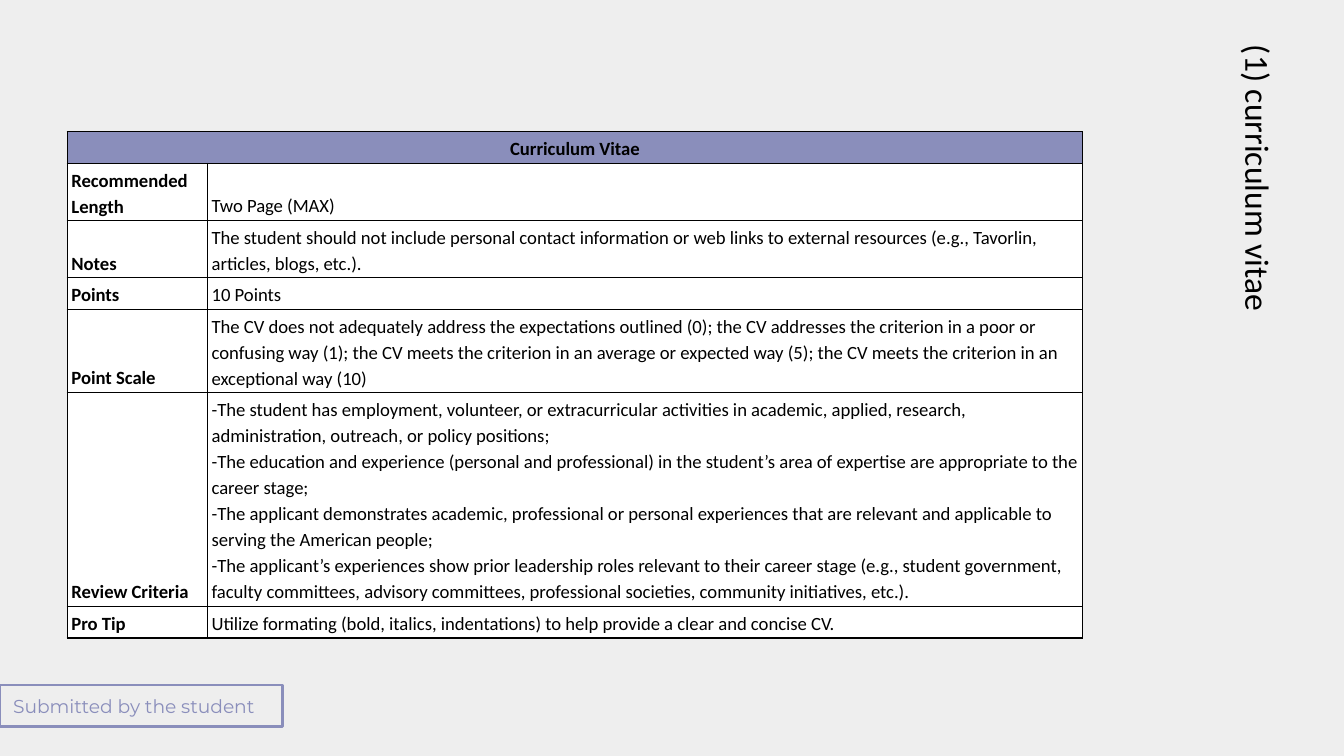
from pptx import Presentation
from pptx.dml.color import RGBColor
from pptx.enum.shapes import MSO_SHAPE as Shape
from pptx.enum.text import MSO_ANCHOR as Anchor, PP_ALIGN as Align
from pptx.oxml import parse_xml
from pptx.oxml.ns import nsdecls
from pptx.util import Cm, Pt

COLORS = {"page": "EEEEEE", "accent": "8A8EBB", "text": "000000", "cell": "FFFFFF"}

ROWS = [
    (0.6, "Curriculum Vitae", ""),
    (1.08, "Recommended Length", "Two Page (MAX)"),
    (1.08, "Notes",
     "The student should not include personal contact information or web links to "
     "external resources (e.g., Tavorlin, articles, blogs, etc.)."),
    (0.6, "Points", "10 Points"),
    (1.57, "Point Scale",
     "The CV does not adequately address the expectations outlined (0); the CV addresses "
     "the criterion in a poor or confusing way (1); the CV meets the criterion in an "
     "average or expected way (5); the CV meets the criterion in an exceptional way (10)"),
    (4.04, "Review Criteria",
     "-The student has employment, volunteer, or extracurricular activities in academic, "
     "applied, research, administration, outreach, or policy positions;\n"
     "-The education and experience (personal and professional) in the student’s area of "
     "expertise are appropriate to the career stage;\n"
     "-The applicant demonstrates academic, professional or personal experiences that are "
     "relevant and applicable to serving the American people;\n"
     "-The applicant’s experiences show prior leadership roles relevant to their career "
     "stage (e.g., student government, faculty committees, advisory committees, "
     "professional societies, community initiatives, etc.)."),
    (0.6, "Pro Tip",
     "Utilize formating (bold, italics, indentations) to help provide a clear and concise CV."),
]
COLUMN_WIDTHS = [2.65, 16.54]


def color(name):
    return RGBColor.from_string(COLORS[name])


def write(frame, text, size, font="Calibri", ink="text", bold=False):
    frame.text = text
    frame.word_wrap = True
    for paragraph in frame.paragraphs:
        for run in paragraph.runs:
            run.font.size = Pt(size)
            run.font.name = font
            run.font.bold = bold
            run.font.color.rgb = color(ink)


deck = Presentation()
deck.slide_width, deck.slide_height = Cm(25.4), Cm(14.29)
slide = deck.slides.add_slide(deck.slide_layouts[6])
slide.background.fill.solid()
slide.background.fill.fore_color.rgb = color("page")

title = slide.shapes.add_textbox(Cm(17.83), Cm(5.59), Cm(11.58), Cm(1.6))
title.rotation = 90
write(title.text_frame, "(1) curriculum vitae", 18)

submitter = slide.shapes.add_shape(Shape.RECTANGLE, 0, Cm(12.95), Cm(5.34), Cm(0.79))
submitter.shadow.inherit = False
submitter.fill.background()
submitter.line.color.rgb = color("accent")
submitter.line.width = Pt(1.5)
write(submitter.text_frame, "Submitted by the student", 10, "Montserrat", "accent")
submitter.text_frame.vertical_anchor = Anchor.MIDDLE
submitter.text_frame.paragraphs[0].alignment = Align.LEFT
for box in (title, submitter):
    frame = box.text_frame
    frame.margin_left = frame.margin_right = Cm(0.25)
    frame.margin_top = frame.margin_bottom = Cm(0.25)

criteria = slide.shapes.add_table(
    len(ROWS), 2, Cm(1.27), Cm(2.49), Cm(sum(COLUMN_WIDTHS)), Cm(sum(row[0] for row in ROWS))
).table
for column, width in zip(criteria.columns, COLUMN_WIDTHS):
    column.width = Cm(width)

for r, (height, *texts) in enumerate(ROWS):
    criteria.rows[r].height = Cm(height)
    for c, text in enumerate(texts):
        cell = criteria.cell(r, c)
        write(cell.text_frame, text, 10, bold=c == 0)
        for paragraph in cell.text_frame.paragraphs:
            paragraph.line_spacing = 1.15
            paragraph.font.size = Pt(10)
        cell.vertical_anchor = Anchor.BOTTOM
        cell.margin_left = cell.margin_right = Cm(0.08)
        cell.margin_top = cell.margin_bottom = Cm(0.05)
        cell.fill.solid()
        cell.fill.fore_color.rgb = color("accent" if r == 0 else "cell")
        properties = cell._tc.get_or_add_tcPr()
        for position, side in enumerate(("lnL", "lnR", "lnT", "lnB")):
            border = parse_xml(
                f'<a:{side} {nsdecls("a")} w="{Pt(0.75)}"><a:solidFill>'
                f'<a:srgbClr val="{COLORS["text"]}"/></a:solidFill></a:{side}>'
            )
            properties.insert(position, border)

heading = criteria.cell(0, 0)
heading.merge(criteria.cell(0, 1))
heading.text_frame.paragraphs[0].alignment = Align.CENTER

deck.save("out.pptx")
